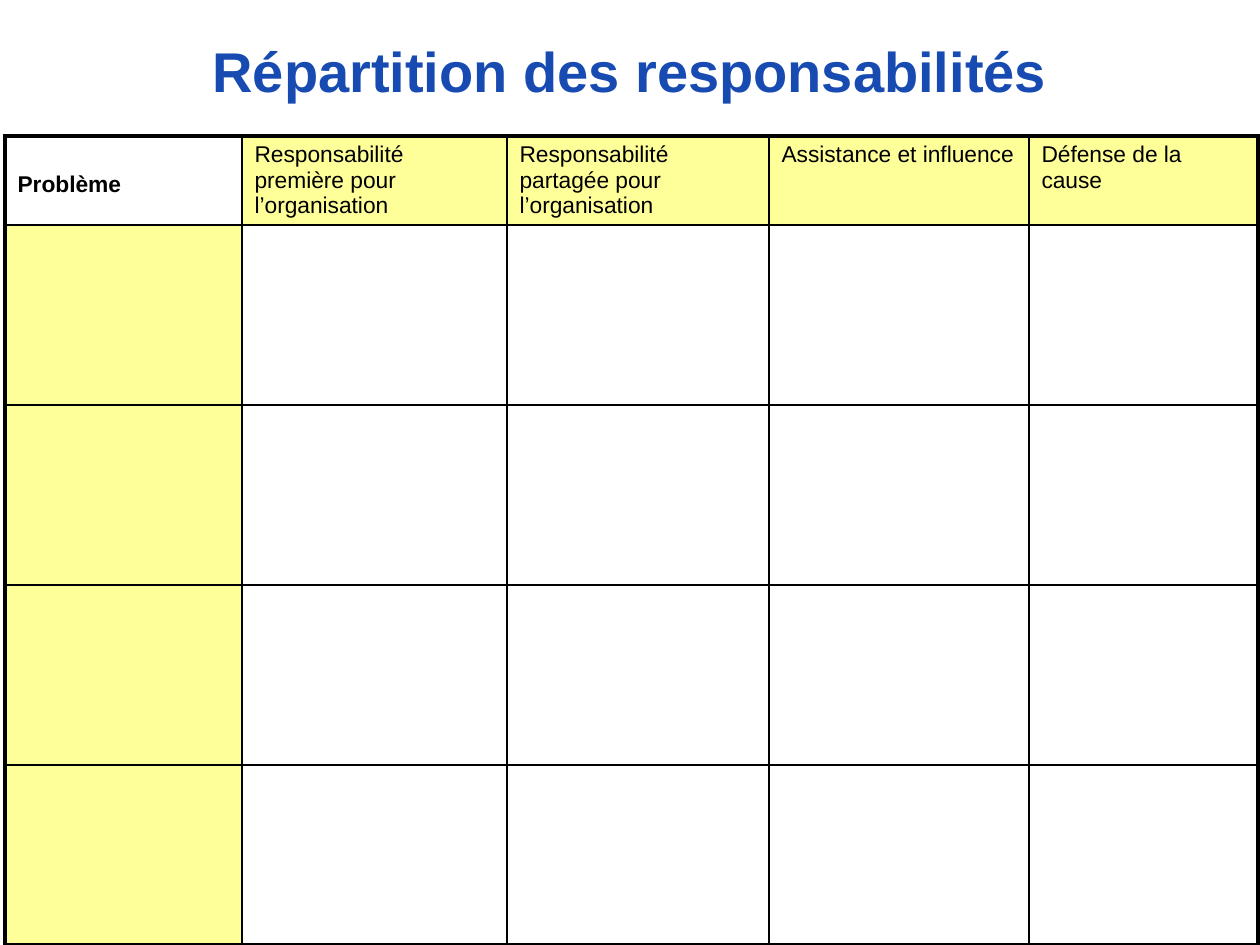
"""Build a responsibility grid slide with a title and a five-column table."""
from dataclasses import dataclass

from lxml import etree
from pptx import Presentation
from pptx.dml.color import RGBColor
from pptx.enum.text import MSO_ANCHOR, PP_ALIGN
from pptx.oxml.ns import qn
from pptx.slide import Slide
from pptx.table import _Cell
from pptx.text.text import _Paragraph
from pptx.util import Emu, Pt

MIDDLE = MSO_ANCHOR.MIDDLE
CENTER = PP_ALIGN.CENTER

PX_PER_INCH = 126
EMU_PER_INCH = 914400
BLANK_LAYOUT = 6

BLUE = RGBColor(0x18, 0x4B, 0xB2)
BLACK = RGBColor(0, 0, 0)
YELLOW = RGBColor(0xFF, 0xFF, 0x99)
WHITE = RGBColor(0xFF, 0xFF, 0xFF)

FONT = "Arial"
OUTER_LINE = Pt(2.25)
INNER_LINE = Pt(1)
HEADER_HEIGHT = 76
BODY_HEIGHT = 180
BODY_ROWS = 4
PROBLEM_MARGIN_TOP = 36


@dataclass(frozen=True)
class Column:
    """Header text and width of one table column."""

    header: str
    width: int


COLUMNS = (
    Column("Problème", 237),
    Column("Responsabilité première pour l’organisation", 265),
    Column("Responsabilité partagée pour l’organisation", 262),
    Column("Assistance et influence", 260),
    Column("Défense de la cause", 229),
)


def px(length: int) -> Emu:
    """Turn pixels into EMU."""
    return Emu(round(length * EMU_PER_INCH / PX_PER_INCH))


def add_run(paragraph: _Paragraph, text: str, size: float, color: RGBColor, bold: bool) -> None:
    """Add one formatted run."""
    run = paragraph.add_run()
    run.text = text
    run.font.name = FONT
    run.font.size = Pt(size)
    run.font.bold = bold
    run.font.color.rgb = color


def set_borders(cell: _Cell, widths: dict[str, int]) -> None:
    """Draw black borders, given in schema order, around a cell."""
    properties = cell._tc.get_or_add_tcPr()
    for position, (side, width) in enumerate(widths.items()):
        line = etree.Element(qn(f"a:ln{side}"), w=str(width))
        fill = etree.SubElement(line, qn("a:solidFill"))
        etree.SubElement(fill, qn("a:srgbClr"), val=str(BLACK))
        properties.insert(position, line)


def add_title(slide: Slide, text: str) -> None:
    """Add the centred slide title."""
    shape = slide.shapes.add_textbox(px(63), px(21), px(1134), px(98))
    frame = shape.text_frame
    frame.word_wrap = True
    frame.vertical_anchor = MIDDLE
    paragraph = frame.paragraphs[0]
    paragraph.alignment = CENTER
    add_run(paragraph, text, 32, BLUE, True)


def add_responsibility_table(slide: Slide, columns: tuple[Column, ...]) -> None:
    """Add the grid with yellow headings and a heavy outer frame."""
    heights = [HEADER_HEIGHT] + [BODY_HEIGHT] * BODY_ROWS
    width = sum(column.width for column in columns)
    last_row, last_column = len(heights) - 1, len(columns) - 1
    table = slide.shapes.add_table(
        len(heights), len(columns), px(5), px(136), px(width), px(sum(heights))
    ).table
    table.first_row = False
    table.horz_banding = False

    for column_index, column in enumerate(columns):
        table.columns[column_index].width = px(column.width)
        paragraph = table.cell(0, column_index).text_frame.paragraphs[0]
        add_run(paragraph, column.header, 13, BLACK, column_index == 0)

    for row_index, height in enumerate(heights):
        table.rows[row_index].height = px(height)
        for column_index in range(len(columns)):
            cell = table.cell(row_index, column_index)
            is_heading = (row_index == 0) != (column_index == 0)
            cell.fill.solid()
            cell.fill.fore_color.rgb = YELLOW if is_heading else WHITE
            on_frame = {
                "L": column_index == 0,
                "R": column_index == last_column,
                "T": row_index == 0,
                "B": row_index == last_row,
            }
            set_borders(cell, {
                side: OUTER_LINE if outer else INNER_LINE
                for side, outer in on_frame.items()
            })
    table.cell(0, 0).margin_top = px(PROBLEM_MARGIN_TOP)


def main() -> None:
    """Create and save the presentation."""
    presentation = Presentation()
    presentation.slide_width = px(1260)
    presentation.slide_height = px(945)
    slide = presentation.slides.add_slide(presentation.slide_layouts[BLANK_LAYOUT])
    add_responsibility_table(slide, COLUMNS)
    add_title(slide, "Répartition des responsabilités")
    presentation.save("out.pptx")


if __name__ == "__main__":
    main()
